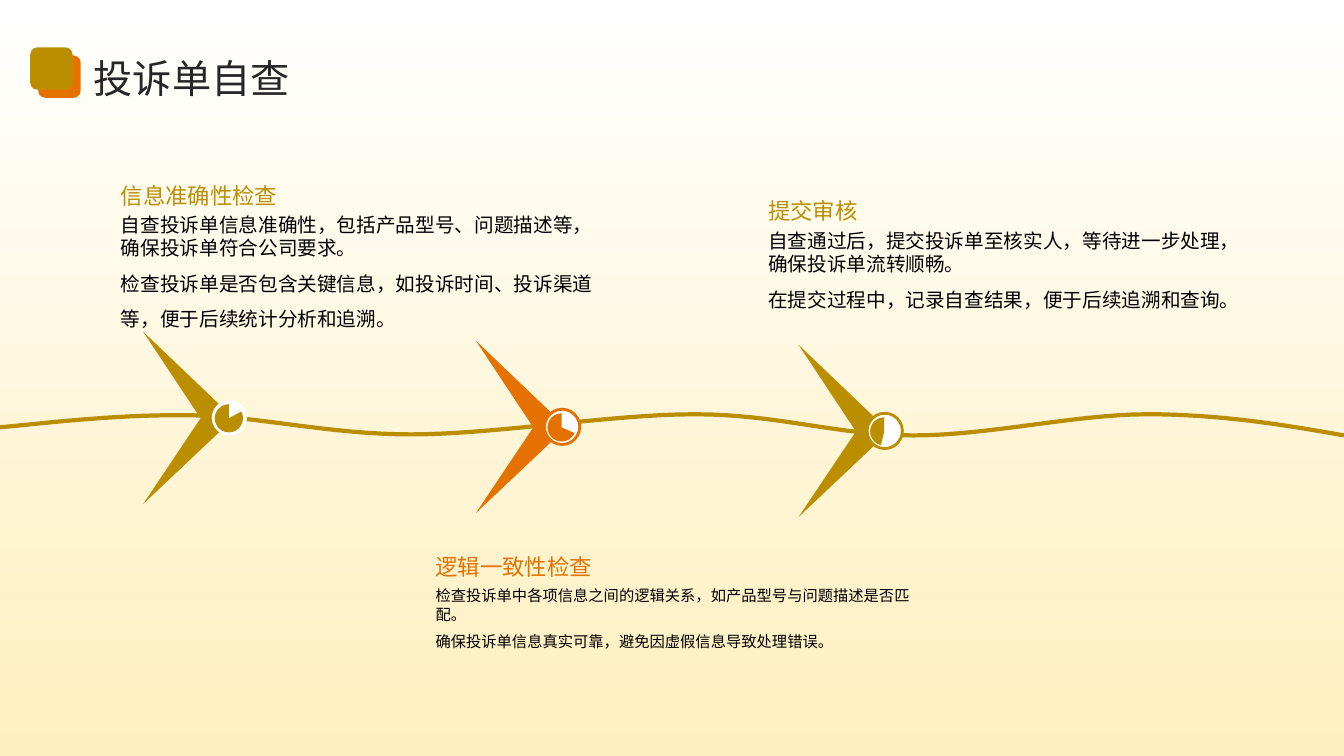
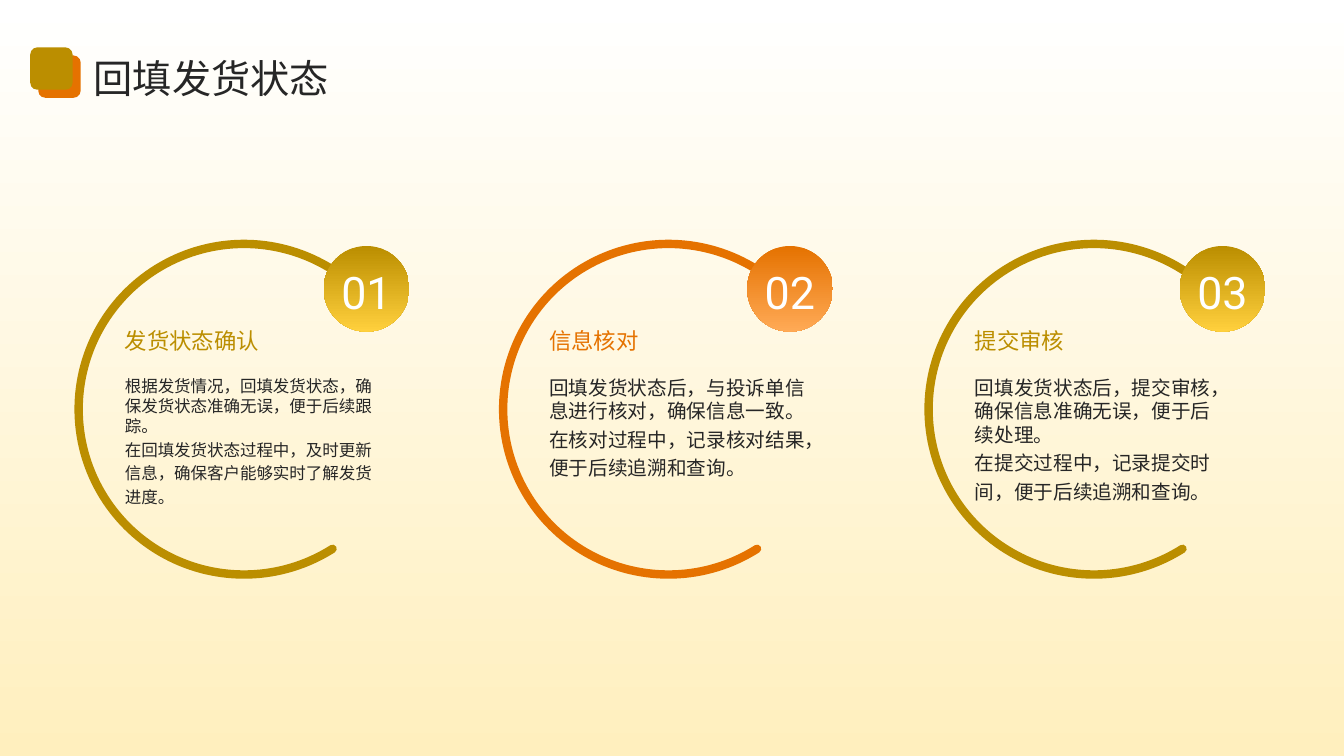
"""Build two slides on complaint self-checks and shipping status."""
from lxml.etree import SubElement
from pptx import Presentation
from pptx.dml.color import RGBColor
from pptx.enum.shapes import MSO_SHAPE
from pptx.enum.text import MSO_ANCHOR, PP_ALIGN
from pptx.oxml.ns import qn
from pptx.util import Inches, Pt

HUES = {
    "gold": "BB8E00", "sun": "FFD03D", "orange": "E57200", "peach": "FFAA56",
    "white": "FFFFFF", "cream": "FFEFBE", "ink": "262626", "black": "000000",
}
LIGHT = {"gold": "sun", "orange": "peach"}
HAN, DIGIT = "Noto Sans CJK SC", "Roboto"
EM = 1.2

WAVE = [
    (0, 4.24),
    (0.61, 4.18), (1.22, 4.11), (1.9, 4.12),
    (2.58, 4.13), (3.25, 4.31), (4.08, 4.31),
    (4.91, 4.31), (6.06, 4.11), (6.89, 4.11),
    (7.72, 4.11), (8.31, 4.32), (9.06, 4.32),
    (9.81, 4.32), (10.67, 4.11), (11.38, 4.11),
    (12.09, 4.11), (12.71, 4.21), (13.33, 4.32),
]
DART = [(0, 0), (0.9, 0.86), (0, 1.71), (0.57, 0.86)]
MARKS = [
    (1.42, 3.29, "gold", None, 331.2),
    (4.72, 3.38, "orange", "orange", 23.5),
    (7.92, 3.42, "gold", "gold", 103.2),
]
CHECKS = [
    (1.2, 1.36, 2.11, 14, "gold", "信息准确性检查", [
        "自查投诉单信息准确性，包括产品型号、问题描述等，确保投诉单符合公司要求。",
        "检查投诉单是否包含关键信息，如投诉时间、投诉渠道等，便于后续统计分析和追溯。"]),
    (7.62, 1.51, 2.27, 14, "gold", "提交审核", [
        "自查通过后，提交投诉单至核实人，等待进一步处理，确保投诉单流转顺畅。",
        "在提交过程中，记录自查结果，便于后续追溯和查询。"]),
    (4.32, 5.04, 5.82, 10.9, "orange", "逻辑一致性检查", [
        "检查投诉单中各项信息之间的逻辑关系，如产品型号与问题描述是否匹配。",
        "确保投诉单信息真实可靠，避免因虚假信息导致处理错误。"]),
]
RINGS = [
    (0.78, 3.21, 2.71, 11.8, "gold", "发货状态确认", [
        "根据发货情况，回填发货状态，确保发货状态准确无误，便于后续跟踪。",
        "在回填发货状态过程中，及时更新信息，确保客户能够实时了解发货进度。"]),
    (4.99, 7.41, 2.81, 14, "orange", "信息核对", [
        "回填发货状态后，与投诉单信息进行核对，确保信息一致。",
        "在核对过程中，记录核对结果，便于后续追溯和查询。"]),
    (9.21, 11.7, 2.71, 14, "gold", "提交审核", [
        "回填发货状态后，提交审核，确保信息准确无误，便于后续处理。",
        "在提交过程中，记录提交时间，便于后续追溯和查询。"]),
]


def tint(name):
    return RGBColor.from_string(HUES[name])


def paint(shape, fill=None, line=None, width=2):
    shape.shadow.inherit = False
    if fill is None:
        shape.fill.background()
    elif isinstance(fill, tuple):
        shape.fill.gradient()
        shape.fill.gradient_angle = 270
        for stop, name in zip(shape.fill.gradient_stops, fill):
            stop.color.rgb = tint(name)
    else:
        shape.fill.solid()
        shape.fill.fore_color.rgb = tint(fill)
    if line:
        shape.line.color.rgb = tint(line)
        shape.line.width = Pt(width)
    else:
        shape.line.fill.background()
    return shape


def draw(slide, kind, x, y, w, h, *look):
    box = [Inches(n) for n in (x, y, w, h)]
    return paint(slide.shapes.add_shape(kind, *box), *look)


def trace(slide, dots, closed, *look):
    dots = [(Inches(x), Inches(y)) for x, y in dots]
    form = slide.shapes.build_freeform(*dots[0], scale=1.0)
    form.add_line_segments(dots[1:], close=closed)
    return paint(form.convert_to_shape(), *look)


def curve(knots, steps=16):
    dots = [knots[0]]
    for i in range(0, len(knots) - 1, 3):
        a, b, c, d = knots[i:i + 4]
        for k in range(1, steps + 1):
            t = k / steps
            u = 1 - t
            mix = (u ** 3, 3 * u * u * t, 3 * u * t * t, t ** 3)
            dots.append(tuple(sum(m * p[j] for m, p in zip(mix, (a, b, c, d)))
                              for j in (0, 1)))
    return dots


def write(shape, lines, size, hue, gaps, anchor=MSO_ANCHOR.TOP, pad=(0, 0),
          font=HAN, align=PP_ALIGN.LEFT):
    frame = shape.text_frame
    frame.word_wrap = True
    frame.vertical_anchor = anchor
    frame.margin_left = frame.margin_right = Inches(pad[0])
    frame.margin_top = frame.margin_bottom = Inches(pad[1])
    for i, (line, gap) in enumerate(zip(lines, gaps)):
        para = frame.add_paragraph() if i else frame.paragraphs[0]
        para.alignment = align
        para.line_spacing = Pt(round(size * EM * gap, 1))
        run = para.add_run()
        run.text = line
        run.font.size = Pt(size)
        run.font.name = font
        run.font.color.rgb = tint(hue)
        SubElement(run.font._element, qn("a:ea"), typeface=font)


def label(slide, x, y, w, h, *words, **style):
    box = slide.shapes.add_textbox(Inches(x), Inches(y), Inches(w), Inches(h))
    write(box, *words, **style)


def start(deck, title):
    slide = deck.slides.add_slide(deck.slide_layouts[6])
    draw(slide, MSO_SHAPE.FLOWCHART_PROCESS, 0, 0, 13.33, 7.5, ("white", "cream"))
    label(slide, 0.93, 0.49, 11.67, 0.51, [title], 28, "ink", [1.1],
          anchor=MSO_ANCHOR.MIDDLE)
    for x, y, hue in ((0.38, 0.55, "orange"), (0.3, 0.47, "gold")):
        draw(slide, MSO_SHAPE.ROUNDED_RECTANGLE, x, y, 0.42, 0.42, hue)
    return slide


def checks(deck):
    slide = start(deck, "投诉单自查")
    trace(slide, curve(WAVE), False, None, "gold", 3)
    for x, y, hue, rim, turn in MARKS:
        trace(slide, [(x + a, y + b) for a, b in DART], True, hue)
        draw(slide, MSO_SHAPE.OVAL, x + 0.68, y + 0.68, 0.35, 0.35, "white", rim)
        pie = draw(slide, MSO_SHAPE.PIE, x + 0.71, y + 0.72, 0.28, 0.28, hue)
        pie.adjustments[0], pie.adjustments[1] = turn * 0.6, 270 * 0.6
    for x, top, low, size, hue, head, lines in CHECKS:
        label(slide, x, top, 4.74, 0.71, [head], 16, hue, [1.3],
              anchor=MSO_ANCHOR.BOTTOM)
        label(slide, x, low, 4.74, 1.1, lines, size, "black", [1, 1.5])


def rings(deck):
    slide = start(deck, "回填发货状态")
    for i, (x, disc, wide, size, hue, head, lines) in enumerate(RINGS, 1):
        arc = draw(slide, MSO_SHAPE.ARC, x, 2.42, 3.28, 3.28, None, hue, 6)
        arc.adjustments[0], arc.adjustments[1] = 57.6 * 0.6, 314.5 * 0.6
        arc.line._get_or_add_ln().set("cap", "rnd")
        label(slide, x + 0.36, 3.68, wide, 1.37, lines, size, "ink", [1, 1.2],
              pad=(0.1, 0.05))
        label(slide, x + 0.36, 3.17, wide, 0.51, [head], 16, hue, [1.1],
              pad=(0.1, 0.05))
        ball = draw(slide, MSO_SHAPE.OVAL, disc, 2.44, 0.85, 0.85,
                    (hue, LIGHT[hue]))
        write(ball, [f"{i:02}"], 32, "white", [1.1], anchor=MSO_ANCHOR.MIDDLE,
              font=DIGIT, align=PP_ALIGN.CENTER)


def main():
    deck = Presentation()
    deck.slide_width, deck.slide_height = Inches(13.33), Inches(7.5)
    checks(deck)
    rings(deck)
    deck.save("out.pptx")


if __name__ == "__main__":
    main()
